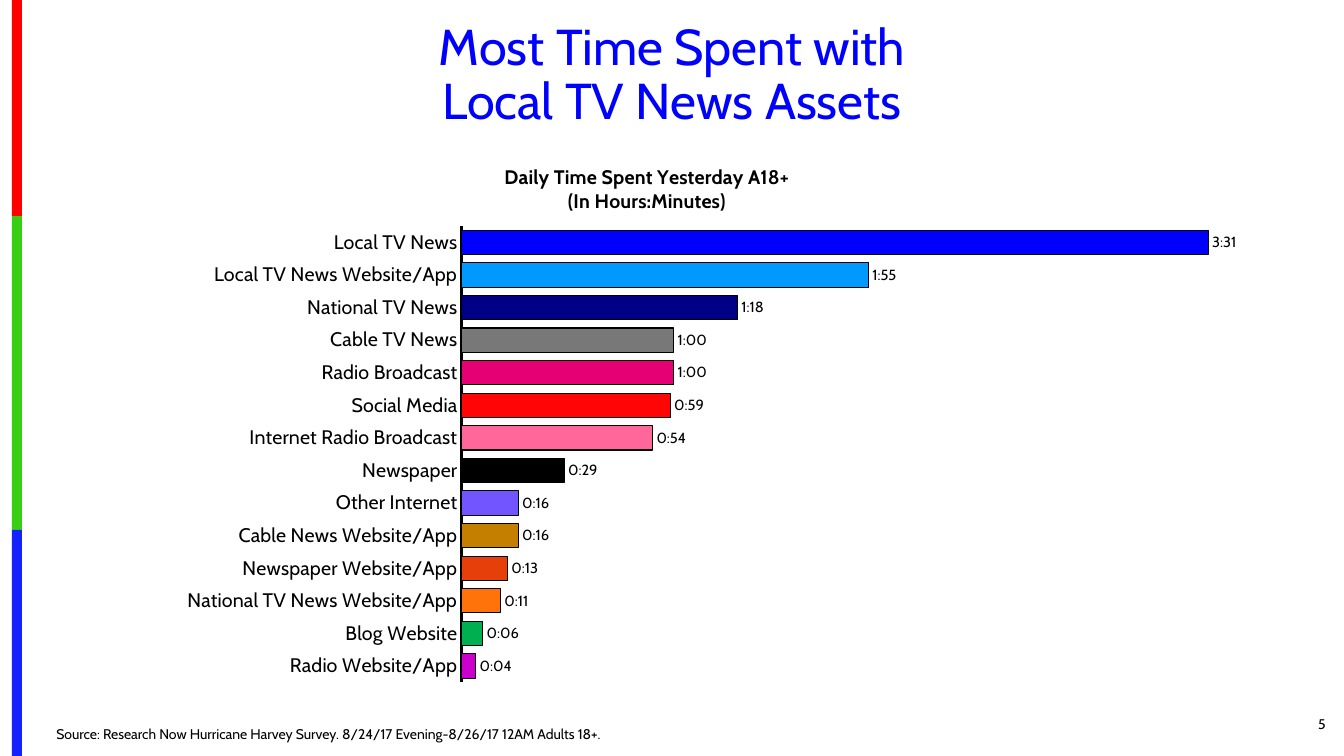
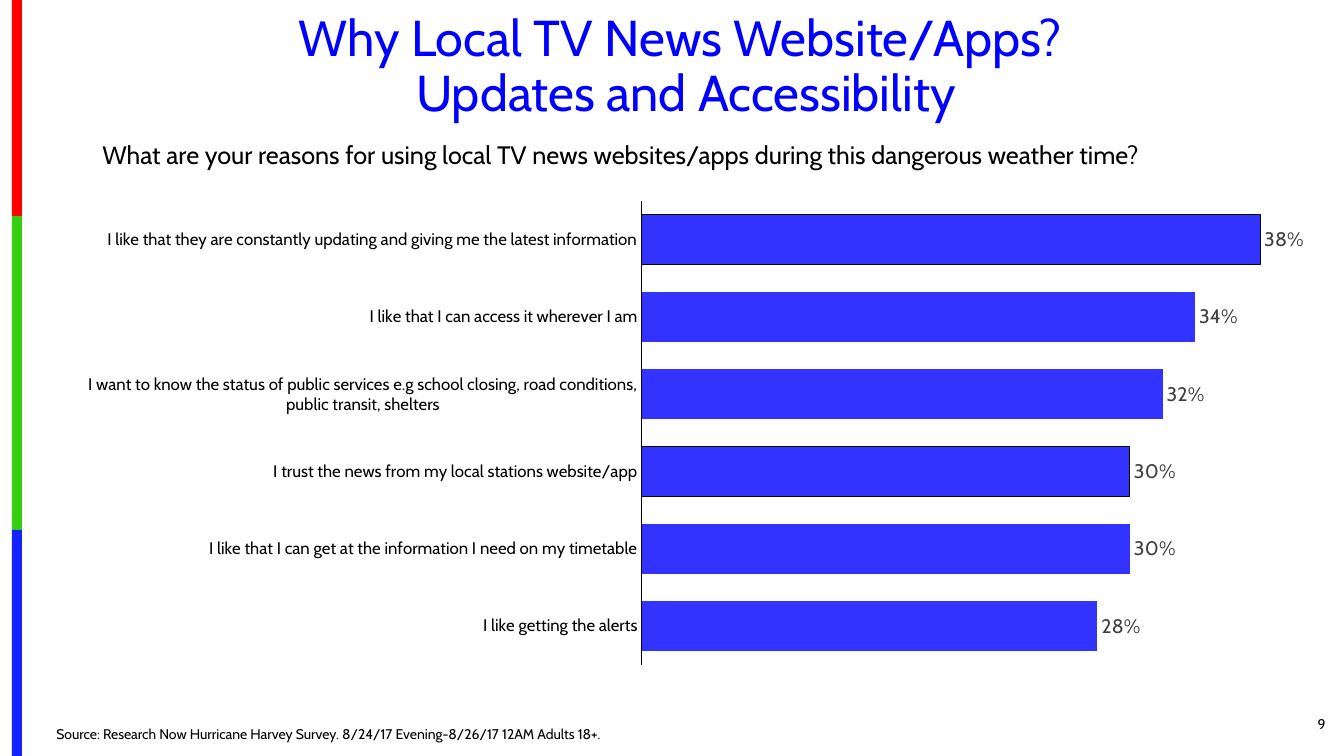
from math import ceil

from pptx import Presentation
from pptx.chart.data import CategoryChartData as ChartData
from pptx.dml.color import RGBColor
from pptx.enum.chart import XL_CHART_TYPE as Kind
from pptx.enum.chart import XL_LABEL_POSITION as Spot
from pptx.enum.chart import XL_TICK_LABEL_POSITION as Labels
from pptx.enum.chart import XL_TICK_MARK as Tick
from pptx.enum.shapes import MSO_SHAPE as Shape
from pptx.enum.text import MSO_ANCHOR as Anchor
from pptx.enum.text import PP_ALIGN as Align
from pptx.oxml import parse_xml
from pptx.oxml.ns import nsdecls, qn
from pptx.util import Pt


def tint(code):
    return RGBColor.from_string(code)


def place(part, spots, inner=False):
    old = part.find(qn("c:layout"))
    spot = 0
    if old is not None:
        spot = part.index(old)
        part.remove(old)
    rows = '<c:layoutTarget val="inner"/>' if inner else ""
    rows += "".join(f'<c:{side}Mode val="edge"/>' for side in "xy")
    rows += "".join(f'<c:{key} val="{val}"/>' for key, val in spots.items())
    xml = f'<c:layout {nsdecls("c")}><c:manualLayout>{rows}</c:manualLayout></c:layout>'
    part.insert(spot, parse_xml(xml))


class Deck:
    face = "Cabin"
    ink = "000000"
    blue = "0000FF"
    bands = [("FE0000", 154.5), ("36CF12", 224), ("1322FE", 161.5)]
    source = ("Source: Research Now Hurricane Harvey Survey. "
              "8/24/17 Evening-8/26/17 12AM Adults 18+.")

    def __init__(self):
        self.file = Presentation()
        self.file.slide_width, self.file.slide_height = Pt(960), Pt(540)
        self.slide = None

    def style(self, font, size, color=ink, bold=False):
        font.name, font.size, font.bold = self.face, Pt(size), bold
        font.color.rgb = tint(color)

    def start(self, page):
        self.slide = self.file.slides.add_slide(self.file.slide_layouts[6])
        top = 0
        for color, tall in self.bands:
            self.band(color, top, tall)
            top += tall
        self.text([self.source], (33.1, 516, 680, 18), 10, anchor=Anchor.BOTTOM, space=0.9)
        self.text([page], (876, 502.5, 78, 29), 10, align=Align.RIGHT, anchor=Anchor.MIDDLE)

    def band(self, color, top, tall):
        bar = self.slide.shapes.add_shape(Shape.RECTANGLE, Pt(8.5), Pt(top), Pt(7.2), Pt(tall))
        bar.shadow.inherit = False
        bar.fill.solid()
        bar.fill.fore_color.rgb = tint(color)
        bar.line.fill.background()

    def text(self, lines, box, size, color=ink, align=Align.LEFT, anchor=Anchor.TOP, space=1.0):
        frame = self.slide.shapes.add_textbox(*map(Pt, box)).text_frame
        frame.word_wrap = True
        frame.vertical_anchor = anchor
        para = frame.paragraphs[0]
        para.alignment, para.line_spacing = align, space
        for spot, line in enumerate(lines):
            if spot:
                para.add_line_break()
            run = para.add_run()
            run.text = line
            self.style(run.font, size, color)

    def title(self, lines, box):
        self.text(lines, box, 36, self.blue, Align.CENTER, space=0.9)

    def chart(self, rows, box, plot, peak, form, gap, sizes, rule, shade):
        data = ChartData(number_format=form)
        data.categories = [row[0] for row in rows]
        data.add_series("Series 1", [row[1] for row in rows])
        chart = self.slide.shapes.add_chart(Kind.BAR_CLUSTERED, *map(Pt, box), data).chart
        self.style(chart.font, 10)
        chart.has_legend = chart.has_title = False

        names = chart.category_axis
        names.reverse_order = True
        names.major_tick_mark = names.minor_tick_mark = Tick.NONE
        names.tick_label_position = Labels.NEXT_TO_AXIS
        names.has_major_gridlines = False
        names.format.line.color.rgb = tint(self.ink)
        names.format.line.width = Pt(rule)
        self.style(names.tick_labels.font, sizes[0])

        scale = chart.value_axis
        scale.minimum_scale, scale.maximum_scale = 0, peak
        scale.has_major_gridlines = scale.visible = False

        bars = chart.plots[0]
        bars.gap_width, bars.vary_by_categories = gap, False
        bars.has_data_labels = True
        marks = bars.data_labels
        marks.show_value = True
        marks.number_format, marks.number_format_is_linked = form, False
        marks.position = Spot.OUTSIDE_END
        self.style(marks.font, sizes[1], shade)

        for spot, (_, _, color, edge) in enumerate(rows):
            look = bars.series[0].points[spot].format
            look.fill.solid()
            look.fill.fore_color.rgb = tint(color)
            if edge:
                look.line.color.rgb = tint(self.ink)
                look.line.width = Pt(0.75)
            else:
                look.line.fill.background()

        area = chart.element.find(".//" + qn("c:plotArea"))
        place(area, dict(zip("xywh", plot)), True)
        return chart

    def head(self, chart, lines, left, top):
        chart.has_title = True
        title = chart.chart_title
        title.include_in_layout = False
        frame = title.text_frame
        for spot, line in enumerate(lines):
            para = frame.add_paragraph() if spot else frame.paragraphs[0]
            run = para.add_run()
            run.text = line
            self.style(run.font, 14, bold=True)
        place(title.element, {"x": left, "y": top})


def share(mins):
    return ceil(mins * 100000 / (24 * 60)) / 100000


def times(deck):
    deck.start("5")
    deck.title(["Most Time Spent with", "Local TV News Assets"], (33, 12, 894, 86))
    spent = [
        ("Local TV News", 211, "0000FF"),
        ("Local TV News Website/App", 115, "0099FF"),
        ("National TV News", 78, "000086"),
        ("Cable TV News", 60, "787878"),
        ("Radio Broadcast", 60, "E50073"),
        ("Social Media", 59, "FF0505"),
        ("Internet Radio Broadcast", 54, "FF6699"),
        ("Newspaper", 29, "000000"),
        ("Other Internet", 16, "7355FF"),
        ("Cable News Website/App", 16, "C47E00"),
        ("Newspaper Website/App", 13, "E63F09"),
        ("National TV News Website/App", 11, "FF730A"),
        ("Blog Website", 6, "00B050"),
        ("Radio Website/App", 4, "CC00CC"),
    ]
    rows = [(name, share(mins), color, True) for name, mins, color in spent]
    chart = deck.chart(rows, (48, 91.5, 864, 400.3), (0.326, 0.175, 0.674, 0.814),
                       0.16, "h:mm;@", 34, (14, 10.5), 1.5, deck.ink)
    deck.head(chart, ["Daily Time Spent Yesterday A18+", "(In Hours:Minutes)"], 0.359, 0.058)


def reasons(deck):
    deck.start("9")
    deck.title(["Why Local TV News Website/Apps?", " Updates and Accessibility"],
               (18, 6, 936, 86))
    deck.text(["What are your reasons for using local TV news websites/apps "
               "during this dangerous weather time?"], (66, 96, 831, 29), 18)
    votes = [
        ("I like that they are constantly updating and giving me the latest information",
         0.38, True),
        ("I like that I can access it wherever I am", 0.34, False),
        ("I want to know the status of public services e.g school closing, "
         "road conditions, public transit, shelters", 0.32, False),
        ("I trust the news from my local stations website/app", 0.3, True),
        ("I like that I can get at the information I need on my timetable", 0.3, False),
        ("I like getting the alerts", 0.28, False),
    ]
    rows = [(name, part, "3333FF", edge) for name, part, edge in votes]
    deck.chart(rows, (33.1, 139.7, 903, 391.7), (0.471, 0.01, 0.515, 0.846),
               0.4, "0%", 55, (12, 14), 0.75, "404040")


def main():
    deck = Deck()
    times(deck)
    reasons(deck)
    deck.file.save("out.pptx")


if __name__ == "__main__":
    main()
